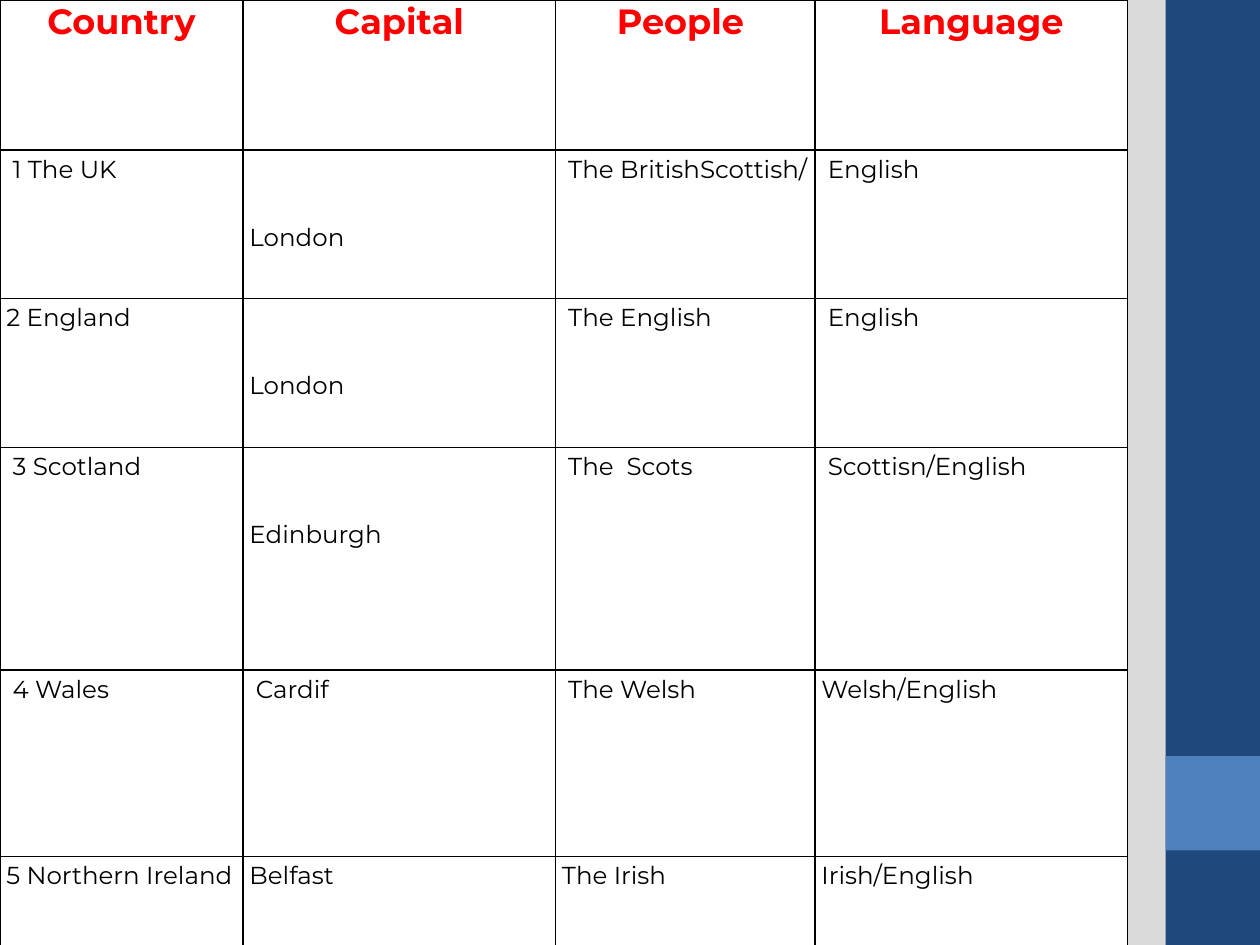
from dataclasses import dataclass

from lxml.etree import SubElement
from pptx import Presentation
from pptx.dml.color import RGBColor
from pptx.enum.shapes import MSO_SHAPE
from pptx.enum.text import PP_ALIGN
from pptx.oxml import parse_xml
from pptx.oxml.ns import nsdecls, qn
from pptx.util import Inches, Pt

FONT = "Montserrat"
BLACK, WHITE, RED = "000000", "FFFFFF", "FF0000"
NAVY, BLUE, GREY = "1F497D", "4F81BD", "DADADA"

INSET = 0.05
INDENT = 0.1  # left margin of the slightly indented entries
LOWERED = 0.54  # top margin of entries set two lines down

COLUMN_WIDTHS = [1.93, 2.48, 2.06, 2.48]
ROW_HEIGHTS = [1.19, 1.18, 1.18, 1.77, 1.48, 0.71]
HEADINGS = ["Country", "Capital", "People ", "Language"]


@dataclass
class Band:
    top: float
    height: float
    color: str


@dataclass
class Entry:
    text: str
    left: float = INSET
    top: float = 0


def indented(text: str) -> Entry:
    return Entry(text, left=INDENT)


def lowered(text: str) -> Entry:
    return Entry(text, top=LOWERED)


BANDS = [Band(0, 7.5, NAVY), Band(6, 0.75, BLUE)]

COUNTRIES = [
    [indented("1 The UK"), lowered("London"),
     indented("The BritishScottish/"), indented("English")],
    [Entry("2 England"), lowered("London"),
     indented("The English"), indented("English")],
    [indented("3 Scotland"), lowered("Edinburgh"),
     indented("The  Scots"), indented("Scottisn/English")],
    [indented("4 Wales"), indented("Cardif"),
     indented("The Welsh"), Entry("Welsh/English")],
    [Entry("5 Northern Ireland"), Entry("Belfast"),
     Entry("The Irish"), Entry("Irish/English")],
]


def paint(fill, color: str) -> None:
    fill.solid()
    fill.fore_color.rgb = RGBColor.from_string(color)


def write(frame, text: str, *, size: float = 14, color: str = BLACK,
          bold: bool = False, align=PP_ALIGN.LEFT, spacing: float = 1.15) -> None:
    para = frame.paragraphs[0]
    para.alignment = align
    para.line_spacing = spacing
    span = para.add_run()
    span.text = text
    span.font.name = FONT
    span.font.size = Pt(size)
    span.font.bold = bold
    span.font.color.rgb = RGBColor.from_string(color)


def set_background(page) -> None:
    """Radial gradient, white turning grey at the rim."""
    stops = "".join(
        f'<a:gs pos="{position * 1000}"><a:srgbClr val="{color}"/></a:gs>'
        for position, color in [(0, WHITE), (75, WHITE), (100, GREY)])
    background = parse_xml(
        f'<p:bg {nsdecls("p", "a")}><p:bgPr><a:gradFill rotWithShape="1">'
        f'<a:gsLst>{stops}</a:gsLst><a:path path="circle">'
        '<a:fillToRect l="20000" t="50000" r="100000" b="50000"/></a:path>'
        '</a:gradFill><a:effectLst/></p:bgPr></p:bg>')
    page.element.cSld.insert(0, background)


def add_band(page, band: Band) -> None:
    box = page.shapes.add_shape(MSO_SHAPE.RECTANGLE, Inches(9.25), Inches(band.top),
                                Inches(0.75), Inches(band.height))
    box.shadow.inherit = False
    paint(box.fill, band.color)
    box.line.fill.background()


def add_borders(cell) -> None:
    properties = cell._tc.get_or_add_tcPr()
    for side in ("a:lnL", "a:lnR", "a:lnT", "a:lnB"):
        line = SubElement(properties, qn(side), w=str(Pt(1)))
        solid = SubElement(line, qn("a:solidFill"))
        SubElement(solid, qn("a:srgbClr"), val=BLACK)


def fill_cell(cell, entry: Entry, **text_format) -> None:
    add_borders(cell)
    paint(cell.fill, WHITE)
    cell.margin_left = Inches(entry.left)
    # Indented entries gain their room from the right margin
    cell.margin_right = Inches(INSET if entry.left == INSET else 0.02)
    cell.margin_top = Inches(entry.top)
    cell.margin_bottom = 0
    write(cell.text_frame, entry.text, **text_format)


def add_country_table(page) -> None:
    table = page.shapes.add_table(
        len(ROW_HEIGHTS), len(COLUMN_WIDTHS), 0, 0,
        Inches(sum(COLUMN_WIDTHS)), Inches(sum(ROW_HEIGHTS))).table
    table.first_row = False
    table.horz_banding = False
    for column, width in zip(table.columns, COLUMN_WIDTHS):
        column.width = Inches(width)
    for row, height in zip(table.rows, ROW_HEIGHTS):
        row.height = Inches(height)

    for column_index, heading in enumerate(HEADINGS):
        fill_cell(table.cell(0, column_index), Entry(heading), size=20, color=RED,
                  bold=True, align=PP_ALIGN.CENTER, spacing=1.0)
    for row_index, entries in enumerate(COUNTRIES, start=1):
        for column_index, entry in enumerate(entries):
            fill_cell(table.cell(row_index, column_index), entry)


def main() -> None:
    deck = Presentation()
    deck.slide_width, deck.slide_height = Inches(10), Inches(7.5)
    page = deck.slides.add_slide(deck.slide_layouts[6])

    # Background and side bands
    set_background(page)
    for band in BANDS:
        add_band(page, band)

    # Countries, capitals, peoples and languages
    add_country_table(page)

    deck.save("out.pptx")


if __name__ == "__main__":
    main()
